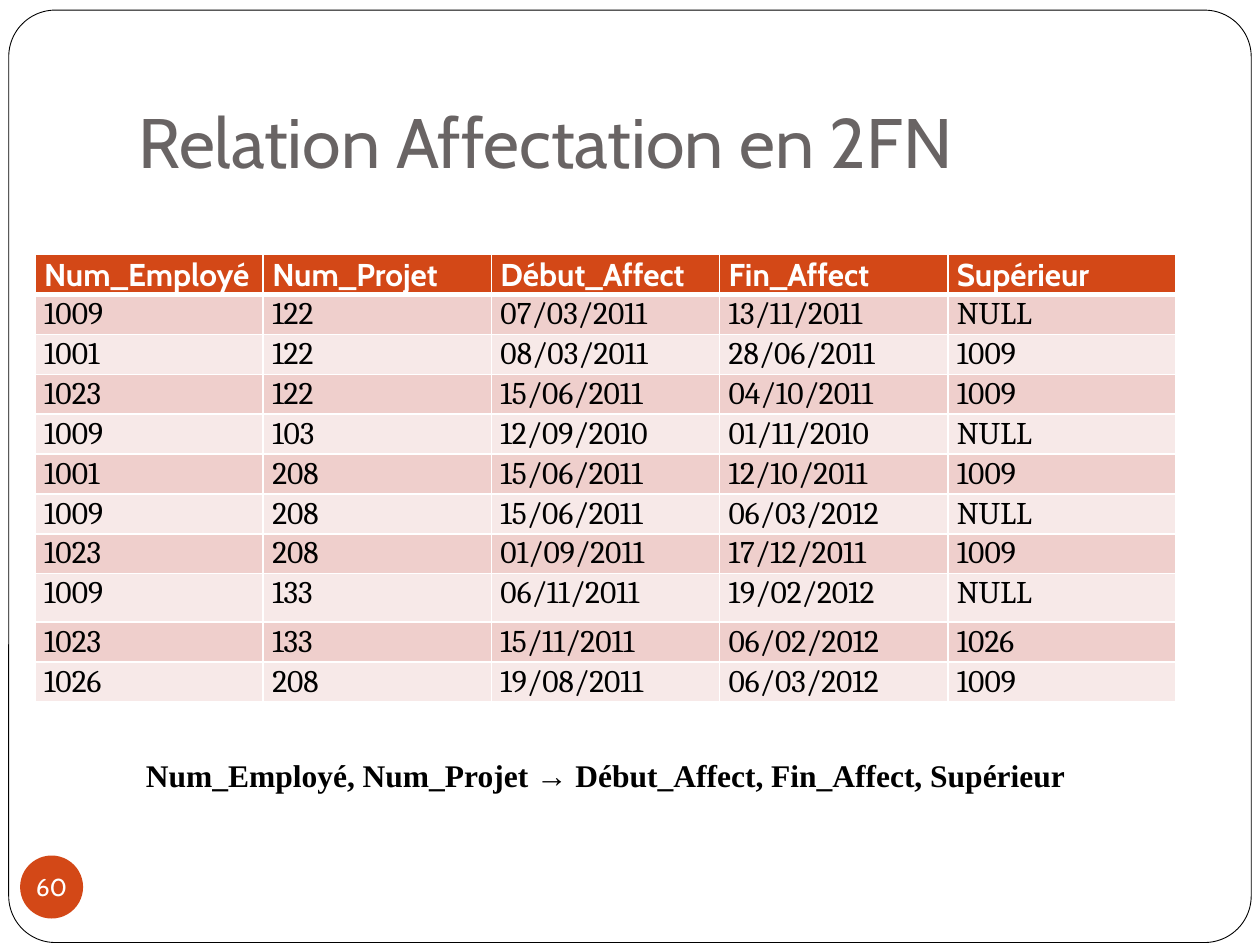
from pptx import Presentation
from pptx.dml.color import RGBColor
from pptx.enum.shapes import MSO_SHAPE as Preset
from pptx.enum.text import MSO_ANCHOR as Anchor, PP_ALIGN as Align
from pptx.oxml.ns import qn
from pptx.util import Pt
from lxml.etree import SubElement

HEADERS = ["Num_Employé", "Num_Projet", "Début_Affect", "Fin_Affect", "Supérieur"]
ASSIGNMENTS = [
    ["1009", "122", "07/03/2011", "13/11/2011", "NULL"],
    ["1001", "122", "08/03/2011", "28/06/2011", "1009"],
    ["1023", "122", "15/06/2011", "04/10/2011", "1009"],
    ["1009", "103", "12/09/2010", "01/11/2010", "NULL"],
    ["1001", "208", "15/06/2011", "12/10/2011", "1009"],
    ["1009", "208", "15/06/2011", "06/03/2012", "NULL"],
    ["1023", "208", "01/09/2011", "17/12/2011", "1009"],
    ["1009", "133", "06/11/2011", "19/02/2012", "NULL"],
    ["1023", "133", "15/11/2011", "06/02/2012", "1026"],
    ["1026", "208", "19/08/2011", "06/03/2012", "1009"],
]
ROW_HEIGHTS = [22.8] * 8 + [27.6, 22.8, 21.6]


def color(value):
    return RGBColor.from_string(value)


def paint(target, value):
    target.fill.solid()
    target.fill.fore_color.rgb = color(value)


def write(frame, text, font="Cabin", size=18, ink="000000", bold=False,
          align=Align.LEFT, spacing=None):
    paragraph = frame.paragraphs[0]
    paragraph.alignment = align
    paragraph.line_spacing = spacing
    run = paragraph.add_run()
    run.text = text
    run.font.name = font
    run.font.size = Pt(size)
    run.font.bold = bold
    run.font.color.rgb = color(ink)


def set_margins(target, left, top, right, bottom):
    target.margin_left, target.margin_top = Pt(left), Pt(top)
    target.margin_right, target.margin_bottom = Pt(right), Pt(bottom)


def add_border(cell, side, width, ink):
    properties = cell._tc.get_or_add_tcPr()
    line = SubElement(properties, qn(f"a:ln{side}"), w=str(Pt(width)))
    fill = SubElement(line, qn("a:solidFill"))
    SubElement(fill, qn("a:srgbClr"), val=ink)


class SlideBuilder:
    accent = "D34817"
    white = "FFFFFF"
    title_ink = "696464"
    bands = ["EFCFCC", "F7E9E8"]

    def __init__(self, slide):
        self.slide = slide

    def shape(self, preset, left, top, width, height, fill, line=None):
        shape = self.slide.shapes.add_shape(
            preset, Pt(left), Pt(top), Pt(width), Pt(height))
        shape.shadow.inherit = False
        paint(shape, fill)
        if line:
            shape.line.color.rgb = color(line)
            shape.line.width = Pt(0.5)
        else:
            shape.line.fill.background()
        return shape

    def frame(self):
        shape = self.shape(Preset.ROUNDED_RECTANGLE, 5, 5.8, 710, 532.8,
                           self.white, "000000")
        shape.adjustments[0] = 0.05

    def page_number(self, text):
        badge = self.shape(Preset.OVAL, 11.5, 488.9, 36, 36, self.accent)
        frame = badge.text_frame
        frame.word_wrap = False
        frame.vertical_anchor = Anchor.MIDDLE
        set_margins(frame, 0, 0, 0, 0)
        write(frame, text, size=14, ink=self.white, align=Align.CENTER)

    def text(self, text, left, top, width, height, anchor=Anchor.TOP,
             bottom=3.6, **style):
        box = self.slide.shapes.add_textbox(
            Pt(left), Pt(top), Pt(width), Pt(height))
        frame = box.text_frame
        frame.word_wrap = True
        frame.vertical_anchor = anchor
        set_margins(frame, 7.2, 3.6, 7.2, bottom)
        write(frame, text, **style)

    def cell(self, cell, text, fill, top_line=1, bottom_line=1, **style):
        set_margins(cell, 5.2, 0, 5.2, 0)
        write(cell.text_frame, text, spacing=1.05, **style)
        for side, width in zip("LRTB", [1, 1, top_line, bottom_line]):
            add_border(cell, side, width, self.white)
        paint(cell, fill)

    def table(self, headers, rows, left, top, column_width, heights):
        table = self.slide.shapes.add_table(
            len(rows) + 1, len(headers), Pt(left), Pt(top),
            Pt(column_width * len(headers)), Pt(sum(heights))).table
        for column in table.columns:
            column.width = Pt(column_width)
        for row, height in zip(table.rows, heights):
            row.height = Pt(height)
        for column, text in enumerate(headers):
            self.cell(table.cell(0, column), text, self.accent,
                      bottom_line=3, ink=self.white, bold=True)
        for index, values in enumerate(rows):
            for column, text in enumerate(values):
                self.cell(table.cell(index + 1, column), text,
                          self.bands[index % 2],
                          top_line=1 if index else 3, font="Cambria")


def main():
    presentation = Presentation()
    presentation.slide_width, presentation.slide_height = Pt(720), Pt(540)
    slide = presentation.slides.add_slide(presentation.slide_layouts[6])
    builder = SlideBuilder(slide)
    builder.frame()
    builder.text("Relation Affectation en 2FN", 72, 21.6, 612, 90,
                 anchor=Anchor.BOTTOM, bottom=7.2, size=40,
                 ink=builder.title_ink)
    builder.page_number("60")
    builder.table(HEADERS, ASSIGNMENTS, 20, 145.5, 130.4, ROW_HEIGHTS)
    builder.text("Num_Employé, Num_Projet → Début_Affect, Fin_Affect, Supérieur",
                 76.3, 428.4, 544.3, 29, font="Times New Roman", bold=True)
    presentation.save("out.pptx")


if __name__ == "__main__":
    main()
